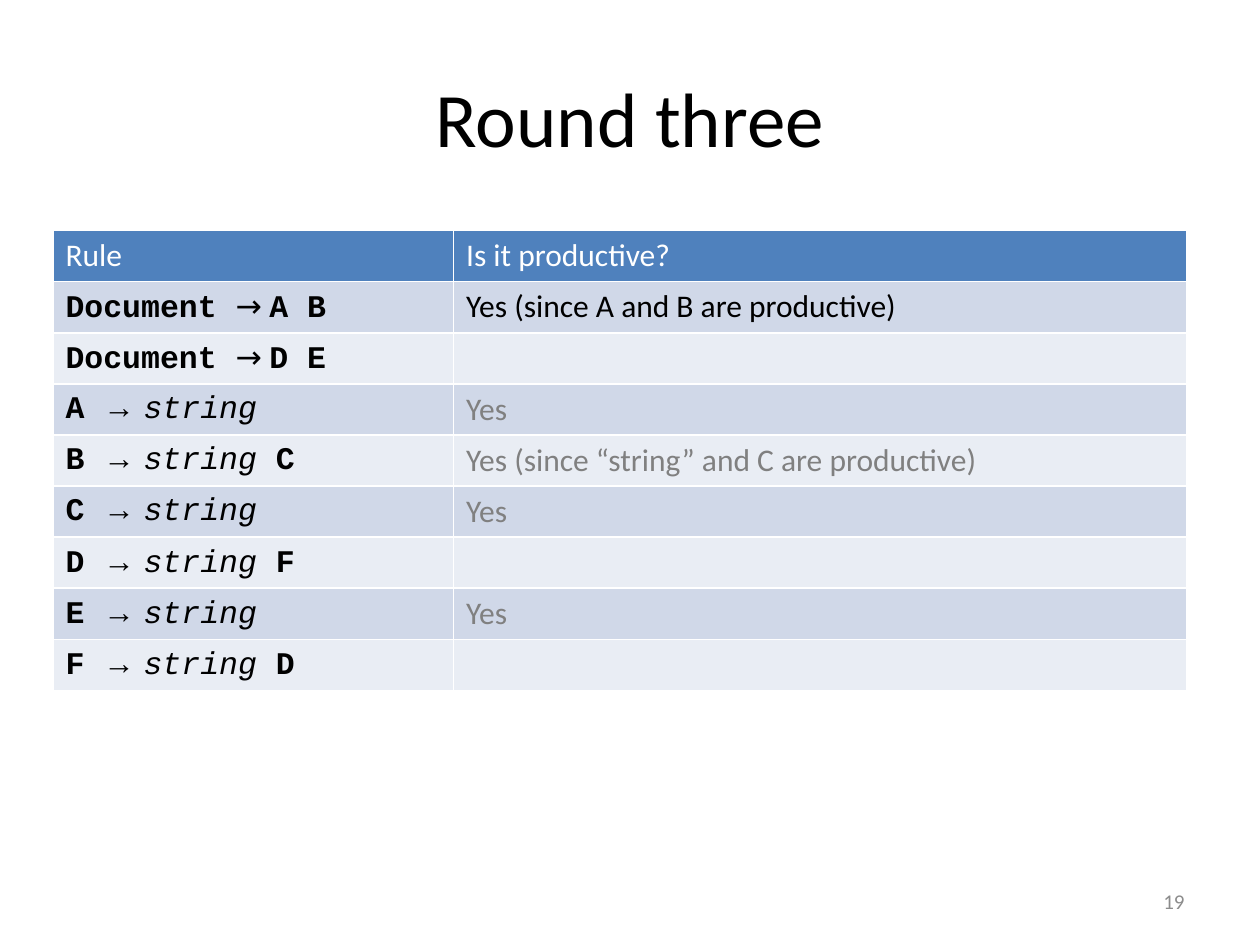
from dataclasses import dataclass

from pptx import Presentation
from pptx.dml.color import RGBColor
from pptx.enum import text
from pptx.util import Inches, Pt


@dataclass(frozen=True)
class Theme:
    body: str = "Calibri"
    code: str = "Courier New"
    arrow: str = "Arial"
    start_arrow: str = "Roboto Condensed"
    black: str = "000000"
    white: str = "FFFFFF"
    settled: str = "808080"
    number: str = "8C8C8C"
    header: str = "4F81BD"
    bands: tuple = ("D0D8E8", "E9EDF4")
    title_size: int = 44
    table_size: int = 18
    number_size: int = 12


THEME = Theme()
START = "Document"
TERMINAL = "string"
NEW_ANSWER = "Yes (since A and B are productive)"

# Left side, terminal, nonterminals, answer
RULES = [
    (START, "", "A B", NEW_ANSWER),
    (START, "", "D E", ""),
    ("A", TERMINAL, "", "Yes"),
    ("B", TERMINAL, "C", "Yes (since “string” and C are productive)"),
    ("C", TERMINAL, "", "Yes"),
    ("D", TERMINAL, "F", ""),
    ("E", TERMINAL, "", "Yes"),
    ("F", TERMINAL, "D", ""),
]


def style(font, name, size, color, bold=False, italic=False):
    font.name = name
    font.size = Pt(size)
    font.color.rgb = RGBColor.from_string(color)
    font.bold = bold
    font.italic = italic


def add_label(page, box, words, size, color, align):
    label = page.shapes.add_textbox(*(Inches(n) for n in box))
    frame = label.text_frame
    frame.word_wrap = True
    frame.vertical_anchor = text.MSO_ANCHOR.MIDDLE
    para = frame.paragraphs[0]
    para.text = words
    para.alignment = align
    style(para.font, THEME.body, size, color)


def fill_cell(cell, color):
    cell.fill.solid()
    cell.fill.fore_color.rgb = RGBColor.from_string(color)


def write_cell(cell, words, color):
    para = cell.text_frame.paragraphs[0]
    para.text = words
    style(para.font, THEME.body, THEME.table_size, color)


def write_rule(cell, left, terminal, nonterminals):
    """Write a grammar rule: bold nonterminals, plain arrow, italic terminal."""
    arrow_font = THEME.start_arrow if left == START else THEME.arrow
    gap = " " if terminal and nonterminals else ""
    parts = [
        (left + " ", THEME.code, True, False),
        ("→ ", arrow_font, False, False),
        (terminal, THEME.code, False, True),
        (gap + nonterminals, THEME.code, True, False),
    ]
    para = cell.text_frame.paragraphs[0]
    for words, name, bold, italic in parts:
        if words:
            span = para.add_run()
            span.text = words
            style(span.font, name, THEME.table_size, THEME.black, bold, italic)


def add_rule_table(page, box, column_widths):
    row_count = len(RULES) + 1
    table = page.shapes.add_table(
        row_count, len(column_widths), *(Inches(n) for n in box)).table
    for column, width in zip(table.columns, column_widths):
        column.width = Inches(width)
    for row in table.rows:
        row.height = Inches(box[3] / row_count)

    for column, heading in enumerate(("Rule", "Is it productive?")):
        fill_cell(table.cell(0, column), THEME.header)
        write_cell(table.cell(0, column), heading, THEME.white)

    for index, (left, terminal, nonterminals, answer) in enumerate(RULES):
        rule_cell, answer_cell = table.rows[index + 1].cells
        for cell in (rule_cell, answer_cell):
            fill_cell(cell, THEME.bands[index % 2])
        write_rule(rule_cell, left, terminal, nonterminals)
        color = THEME.black if answer == NEW_ANSWER else THEME.settled
        write_cell(answer_cell, answer, color)


def main():
    deck = Presentation()
    deck.slide_width, deck.slide_height = Inches(10), Inches(7.5)
    page = deck.slides.add_slide(deck.slide_layouts[6])
    add_label(page, (0.5, 0.3, 9, 1.25), "Round three",
              THEME.title_size, THEME.black, text.PP_ALIGN.CENTER)
    add_label(page, (7.17, 6.95, 2.33, 0.4), "19",
              THEME.number_size, THEME.number, text.PP_ALIGN.RIGHT)
    add_rule_table(page, (0.42, 1.83, 9, 3.65), (3.18, 5.82))
    deck.save("out.pptx")


if __name__ == "__main__":
    main()
